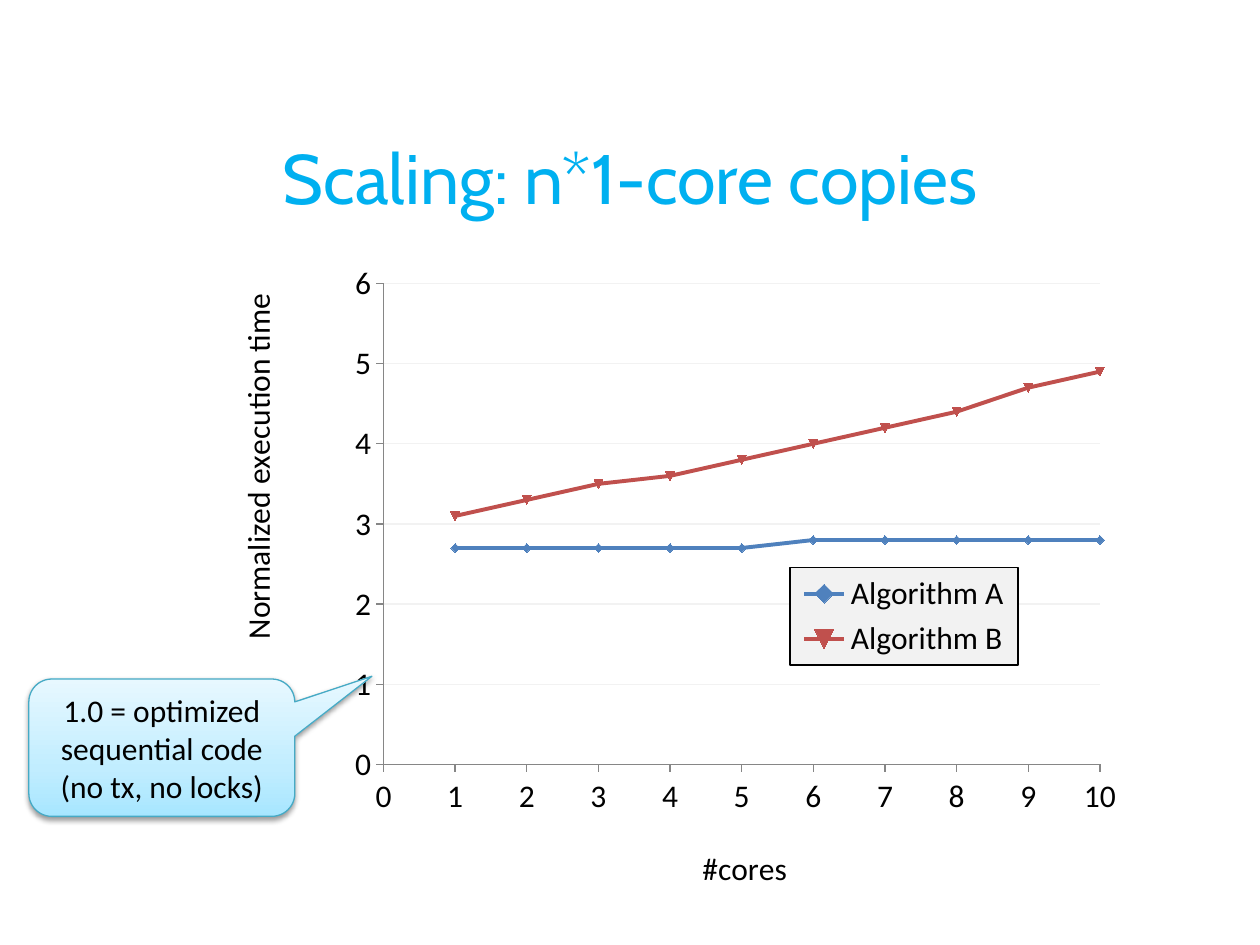
from copy import deepcopy
from lxml.etree import SubElement
from pptx import Presentation
from pptx.chart.data import XyChartData
from pptx.dml.color import RGBColor
from pptx.enum.chart import XL_CHART_TYPE, XL_LEGEND_POSITION, XL_TICK_MARK
from pptx.enum.shapes import MSO_SHAPE
from pptx.enum.text import MSO_ANCHOR, PP_ALIGN
from pptx.oxml import parse_xml
from pptx.oxml.ns import nsdecls, qn
from pptx.util import Pt

BLACK = RGBColor(0x00, 0x00, 0x00)
TITLE_BLUE = RGBColor(0x00, 0xB0, 0xF0)
GRID = RGBColor(0xF2, 0xF2, 0xF2)
AXIS = RGBColor(0x86, 0x86, 0x86)
SERIES_BLUE = RGBColor(0x4F, 0x81, 0xBD)
SERIES_RED = RGBColor(0xC0, 0x50, 0x4D)
CALLOUT_LINE = RGBColor(0x46, 0xAA, 0xC5)
CALLOUT_STOPS = [
    (0, RGBColor(0xA7, 0xE6, 0xFF)),
    (0.35, RGBColor(0xC1, 0xED, 0xFF)),
    (1, RGBColor(0xE7, 0xF8, 0xFF)),
]
BODY = {"name": "Calibri", "size": Pt(18), "bold": False}
SERIES = [
    ("Algorithm A", [2.7, 2.7, 2.7, 2.7, 2.7, 2.8, 2.8, 2.8, 2.8, 2.8], SERIES_BLUE),
    ("Algorithm B", [3.1, 3.3, 3.5, 3.6, 3.8, 4, 4.2, 4.4, 4.7, 4.9], SERIES_RED),
]


def set_all(obj, values):
    for name, value in values.items():
        setattr(obj, name, value)


def set_font(font, values, color):
    set_all(font, values)
    font.color.rgb = color


def set_line(line, color, width):
    line.color.rgb = color
    line.width = Pt(width)


def write(tf, lines, values, color):
    set_all(tf, {"word_wrap": True, "vertical_anchor": MSO_ANCHOR.MIDDLE})
    for i, text in enumerate(lines):
        p = tf.paragraphs[0] if i == 0 else tf.add_paragraph()
        p.alignment = PP_ALIGN.CENTER
        r = p.add_run()
        r.text = text
        set_font(r.font, values, color)


def set_layout(parent, **values):
    for old in parent.findall(qn("c:layout")):
        parent.remove(old)
    layout = parse_xml(f"<c:layout {nsdecls('c')}/>")
    manual = SubElement(layout, qn("c:manualLayout"))
    for name, value in values.items():
        SubElement(manual, qn(f"c:{name}")).set("val", str(value))
    before = [e for e in parent if e.tag in (qn("c:tx"), qn("c:legendPos"))]
    parent.insert(len(before), layout)


def add_title(s, box):
    sp = s.shapes.add_textbox(*map(Pt, box))
    write(sp.text_frame, ["Scaling: n*1-core copies"],
          {"name": "Cabin", "size": Pt(40)}, TITLE_BLUE)


def format_axis(axis, title, top, x, y):
    set_all(axis, {"minimum_scale": 0, "maximum_scale": top, "major_unit": 1,
                   "has_major_gridlines": False,
                   "major_tick_mark": XL_TICK_MARK.OUTSIDE,
                   "minor_tick_mark": XL_TICK_MARK.NONE})
    set_line(axis.format.line, AXIS, 0.75)
    tf = axis.axis_title.text_frame
    tf.text = title
    set_font(tf.paragraphs[0].runs[0].font, BODY, BLACK)
    set_layout(axis.axis_title._element, xMode="edge", yMode="edge", x=x, y=y)


def format_legend(chart):
    chart.has_legend = True
    legend = chart.legend
    set_all(legend, {"position": XL_LEGEND_POSITION.RIGHT, "include_in_layout": False})
    set_layout(legend._element, xMode="edge", yMode="edge", x=0.61, y=0.48, w=0.22, h=0.15)
    legend._element.append(parse_xml(
        f'<c:spPr {nsdecls("c", "a")}><a:solidFill><a:srgbClr val="{GRID}"/></a:solidFill>'
        f'<a:ln w="{Pt(0.75)}"><a:solidFill><a:srgbClr val="{BLACK}"/></a:solidFill></a:ln></c:spPr>'))


def add_scaling_chart(s, box):
    data = XyChartData()
    for name, values, _ in SERIES:
        series = data.add_series(name)
        for cores, value in enumerate(values, 1):
            series.add_data_point(cores, value)
    chart = s.shapes.add_chart(XL_CHART_TYPE.XY_SCATTER_LINES, *map(Pt, box), data).chart
    chart.has_title = False
    set_font(chart.font, BODY, BLACK)
    format_axis(chart.category_axis, "#cores", 10, 0.52, 0.9)
    format_axis(chart.value_axis, "Normalized execution time", 6, 0.07, 0.05)
    chart.value_axis.has_major_gridlines = True
    set_line(chart.value_axis.major_gridlines.format.line, GRID, 0.75)
    plot = chart.plots[0]
    plot.vary_by_categories = False
    set_layout(plot._element.getparent(), layoutTarget="inner", xMode="edge", yMode="edge",
               x=0.218, y=0.043, w=0.691, h=0.74)
    for series, (_, _, color) in zip(plot.series, SERIES):
        series.smooth = False
        set_line(series.format.line, color, 2.25)
        series.marker.size = 5
        series.marker.format.fill.solid()
        series.marker.format.fill.fore_color.rgb = color
    format_legend(chart)


def add_callout(s, box):
    sp = s.shapes.add_shape(MSO_SHAPE.ROUNDED_RECTANGULAR_CALLOUT, *map(Pt, box))
    for i, value in enumerate([0.79, -0.52, 0.167]):
        sp.adjustments[i] = value
    sp.fill.gradient()
    sp.fill.gradient_angle = 90
    stops = sp._element.spPr.find(qn("a:gradFill")).find(qn("a:gsLst"))
    stops.append(deepcopy(stops[-1]))
    for stop, (position, color) in zip(sp.fill.gradient_stops, CALLOUT_STOPS):
        stop.position = position
        stop.color.rgb = color
    set_line(sp.line, CALLOUT_LINE, 0.75)
    sp.shadow.inherit = False
    sp._element.spPr.find(qn("a:effectLst")).append(parse_xml(
        f'<a:outerShdw {nsdecls("a")} blurRad="{Pt(3.1)}" dist="{Pt(1.6)}" dir="5400000" '
        f'rotWithShape="0"><a:srgbClr val="{BLACK}"><a:alpha val="38000"/></a:srgbClr></a:outerShdw>'))
    write(sp.text_frame, ["1.0 = optimized sequential code", "(no tx, no locks)"], BODY, BLACK)


def main():
    prs = Presentation()
    set_all(prs, {"slide_width": Pt(720), "slide_height": Pt(540)})
    s = prs.slides.add_slide(prs.slide_layouts[6])
    add_title(s, (0, 56, 720, 90))
    add_scaling_chart(s, (90, 146, 592.5, 371.5))
    add_callout(s, (16.5, 388, 152, 78.5))
    prs.save("out.pptx")


if __name__ == "__main__":
    main()
